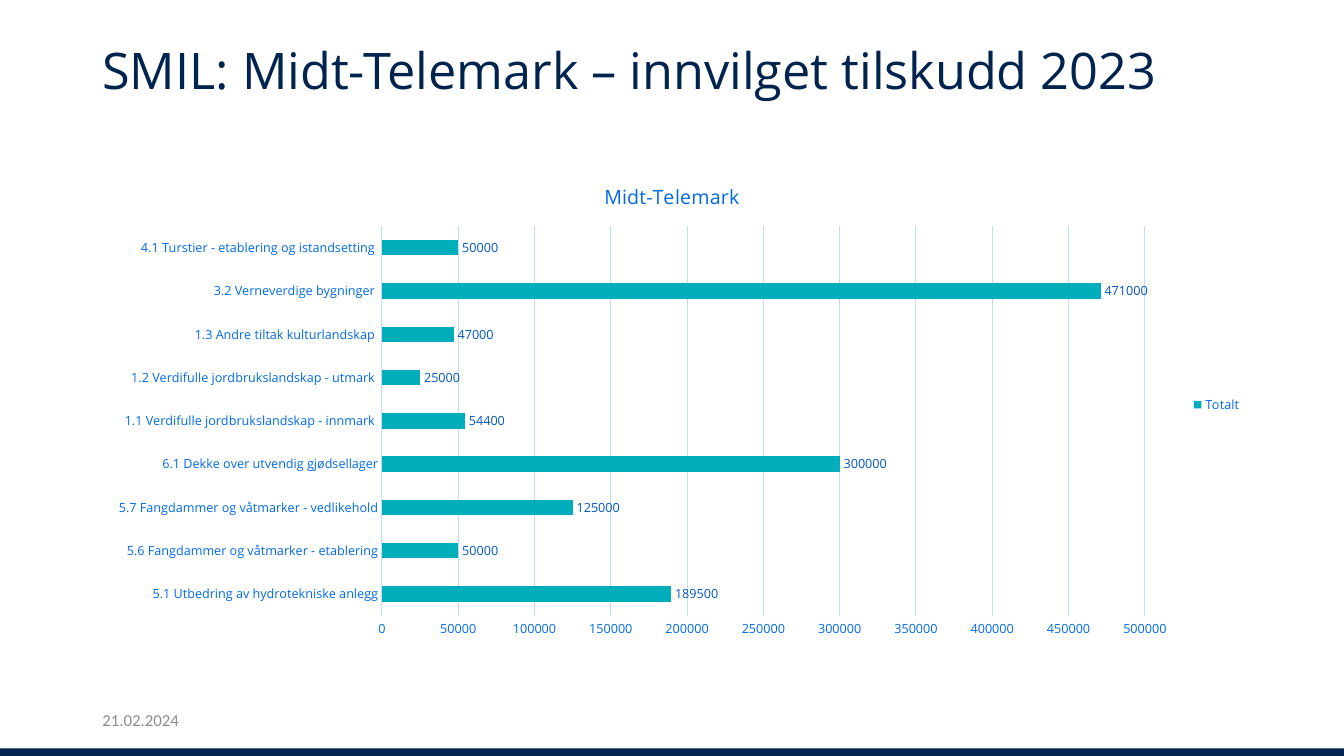
from pptx import Presentation
from pptx.chart.data import CategoryChartData
from pptx.dml.color import RGBColor
from pptx.enum.chart import XL_CHART_TYPE, XL_LABEL_POSITION, XL_LEGEND_POSITION, XL_TICK_MARK
from pptx.enum.shapes import MSO_SHAPE
from pptx.enum.text import MSO_ANCHOR
from pptx.util import Cm, Pt

NAVY = "00244E"
BLUE = "006AE5"
PALE_BLUE = "BEDCFF"


def style_font(font, size, color, name="Open Sans"):
    font.size = Pt(size)
    font.name = name
    font.bold = False
    font.color.rgb = RGBColor.from_string(color)


def add_text(slide, left, top, width, height, text, size, color, name, anchor):
    box = slide.shapes.add_textbox(Cm(left), Cm(top), Cm(width), Cm(height))
    frame = box.text_frame
    frame.word_wrap = True
    frame.vertical_anchor = anchor
    paragraph = frame.paragraphs[0]
    paragraph.line_spacing = 0.9
    run = paragraph.add_run()
    run.text = text
    style_font(run.font, size, color, name)


presentation = Presentation()
presentation.slide_width = Cm(33.87)
presentation.slide_height = Cm(19.05)
slide = presentation.slides.add_slide(presentation.slide_layouts[6])

footer_bar = slide.shapes.add_shape(MSO_SHAPE.RECTANGLE, Cm(0), Cm(18.86), Cm(33.87), Cm(0.19))
footer_bar.shadow.inherit = False
footer_bar.fill.solid()
footer_bar.fill.fore_color.rgb = RGBColor.from_string(NAVY)
footer_bar.line.fill.background()

add_text(slide, 2.33, 1.03, 28.85, 3.66, "SMIL: Midt-Telemark – innvilget tilskudd 2023",
         36, NAVY, "Open Sans", MSO_ANCHOR.TOP)
add_text(slide, 2.33, 17.66, 7.62, 1.01, "21.02.2024", 12, "8C8C8C", "Calibri", MSO_ANCHOR.MIDDLE)

grants = [
    (" 5.1 Utbedring av hydrotekniske anlegg", 189500),
    (" 5.6 Fangdammer og våtmarker - etablering", 50000),
    (" 5.7 Fangdammer og våtmarker - vedlikehold", 125000),
    (" 6.1 Dekke over utvendig gjødsellager", 300000),
    ("1.1 Verdifulle jordbrukslandskap - innmark ", 54400),
    ("1.2 Verdifulle jordbrukslandskap - utmark ", 25000),
    ("1.3 Andre tiltak kulturlandskap ", 47000),
    ("3.2 Verneverdige bygninger ", 471000),
    ("4.1 Turstier - etablering og istandsetting ", 50000),
]
chart_data = CategoryChartData()
chart_data.categories = [measure for measure, amount in grants]
chart_data.add_series("Totalt", [amount for measure, amount in grants])
chart = slide.shapes.add_chart(XL_CHART_TYPE.BAR_CLUSTERED, Cm(2.33), Cm(4.09),
                               Cm(29.21), Cm(12.22), chart_data).chart
style_font(chart.font, 10, NAVY)

chart.has_title = True
title_run = chart.chart_title.text_frame.paragraphs[0].add_run()
title_run.text = "Midt-Telemark"
style_font(title_run.font, 14, BLUE)
chart.chart_title.include_in_layout = False

chart.has_legend = True
chart.legend.position = XL_LEGEND_POSITION.RIGHT
chart.legend.include_in_layout = False
style_font(chart.legend.font, 9, BLUE)

for axis in (chart.category_axis, chart.value_axis):
    axis.major_tick_mark = XL_TICK_MARK.NONE
    axis.minor_tick_mark = XL_TICK_MARK.NONE
    style_font(axis.tick_labels.font, 9, BLUE)

chart.value_axis.minimum_scale = 0
chart.value_axis.maximum_scale = 500000
chart.value_axis.major_unit = 50000
chart.value_axis.has_major_gridlines = True
chart.value_axis.format.line.fill.background()
for line in (chart.category_axis.format.line, chart.value_axis.major_gridlines.format.line):
    line.color.rgb = RGBColor.from_string(PALE_BLUE)
    line.width = Pt(0.75)

plot = chart.plots[0]
plot.gap_width = 182
plot.vary_by_categories = False
series = plot.series[0]
series.format.fill.solid()
series.format.fill.fore_color.rgb = RGBColor.from_string("00ADBA")
labels = series.data_labels
labels.show_value = True
labels.position = XL_LABEL_POSITION.OUTSIDE_END
style_font(labels.font, 9, "0056BA")

presentation.save("out.pptx")
